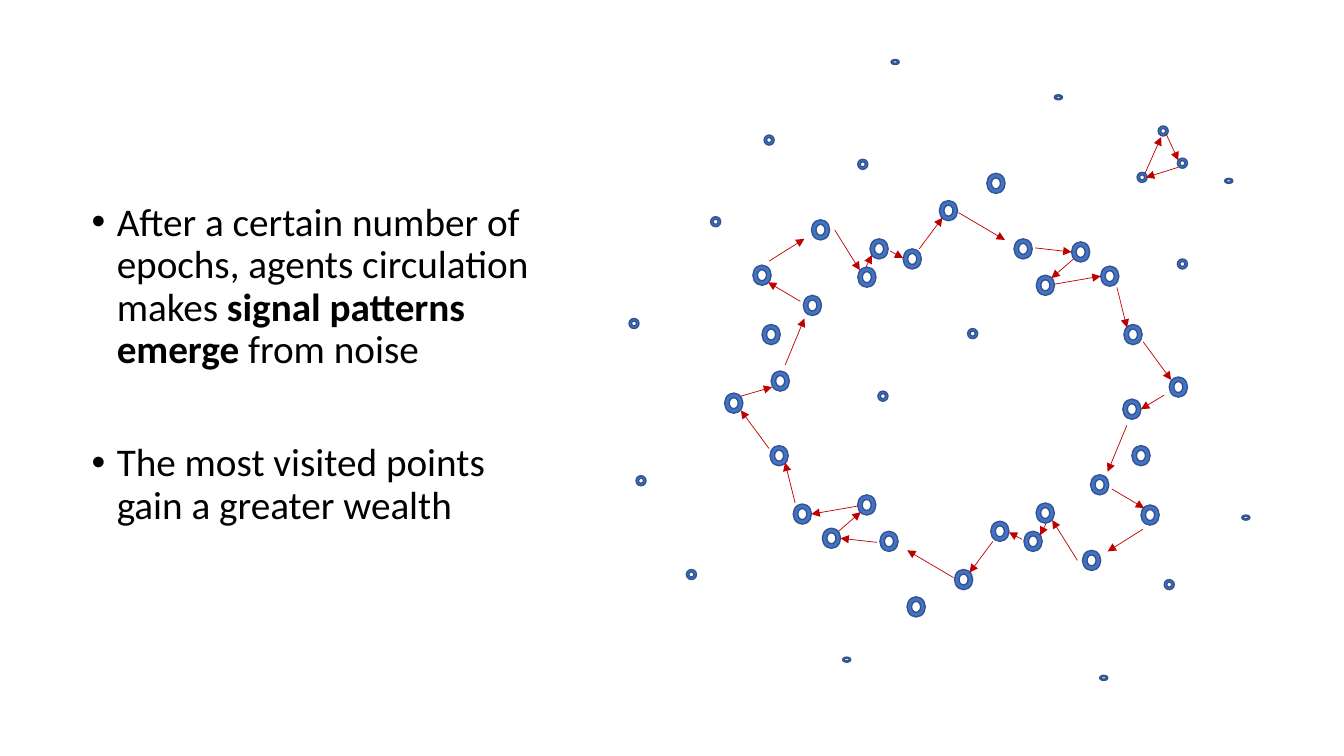
from lxml import etree
from pptx import Presentation
from pptx.dml.color import RGBColor
from pptx.enum.shapes import MSO_CONNECTOR, MSO_SHAPE
from pptx.oxml.ns import qn
from pptx.util import Pt

DONUT = MSO_SHAPE.DONUT
STRAIGHT = MSO_CONNECTOR.STRAIGHT

COLORS = {"fill": "4472C4", "edge": "325491", "arrow": "C00000", "text": "000000"}

BIG = (13, 14.4)
SMALL = (7.2, 7.2)
TINY = (5.8, 3.6)
TURN = (1365.8, 564.5)

RING = [
    (550.8, 239), (580.3, 218.2), (841.7, 276.5), (627.9, 177.8),
    (651.6, 185), (677.5, 150.5), (746.7, 203.8), (730.8, 177.8),
    (792.7, 197.3), (586.1, 164.2), (711.4, 131), (619.2, 198),
    (771.9, 180), (809.3, 239), (544.3, 196.6), (557.3, 272.2),
]
PATHS = [
    ((560.9, 260.6), (574.6, 227.5)), ((571.7, 215.3), (548.6, 201.6)),
    ((549.4, 186.5), (574.6, 170.6)), ((596.2, 164.2), (614.2, 193)),
    ((618.5, 190.8), (622.8, 182.2)), ((635.8, 179.3), (645.1, 184.3)),
    ((656.6, 177.8), (673.2, 155.5)), ((684.7, 151.9), (717.8, 171.4)),
    ((739.4, 177.1), (765.4, 180)), ((766.8, 185), (751, 198.7)),
    ((816.5, 244.1), (836.6, 271.4)), ((797.8, 205.2), (805, 234)),
    ((753.1, 203), (786.2, 197.3)),
]
LINKS = [
    ((529.2, 283), (551.5, 276.5)), ((831.6, 282.2), (815, 292.3)),
    ((817.9, 123.8), (829.4, 97.9)), ((833, 95.8), (841.7, 114.5)),
    ((841.7, 119.5), (818.6, 126.7)),
]
NOISE = [
    (452.9, 231.1), (835.2, 417.6), (844.6, 188.6), (549.4, 100.1),
    (457.9, 343.4), (694.8, 238.3), (511.2, 158.4), (493.9, 410.4),
    (630.7, 283), (844.6, 116.6), (815.8, 126.7), (830.9, 93.6),
    (616.3, 117.4),
]
SPECKS = [
    (756, 69.5), (877.7, 129.2), (639.4, 44.3),
    (788.4, 484.2), (889.9, 369.7), (604.8, 471.2),
]
BULLETS = [
    (10, [("After a certain number of epochs, agents circulation makes ", False),
          ("signal patterns emerge ", True), ("from noise", False)]),
    (50.75, [("The most visited points gain a greater wealth", False)]),
]


def color(name):
    """Return the named colour."""
    return RGBColor.from_string(COLORS[name])


def turn(point):
    """Turn a point by half a circle about the centre of the ring."""
    return TURN[0] - point[0], TURN[1] - point[1]


def add_dot(slide, center, size):
    """Draw a donut of the given size about its centre."""
    (x, y), (wide, high) = center, size
    dot = slide.shapes.add_shape(
        DONUT, Pt(x - wide / 2), Pt(y - high / 2), Pt(wide), Pt(high))
    dot.shadow.inherit = False
    dot.fill.solid()
    dot.fill.fore_color.rgb = color("fill")
    dot.line.color.rgb = color("edge")
    dot.line.width = Pt(1)


def add_arrow(slide, start, end):
    """Draw a thin arrow from start to end."""
    arrow = slide.shapes.add_connector(STRAIGHT, *map(Pt, (*start, *end)))
    arrow.line.color.rgb = color("arrow")
    arrow.line.width = Pt(0.5)
    tip = etree.SubElement(arrow.line._get_or_add_ln(), qn("a:tailEnd"))
    tip.set("type", "triangle")
    etree.SubElement(arrow._element.spPr, qn("a:effectLst"))


def add_bullets(slide, left, top, width, height):
    """Write the bulleted text."""
    box = slide.shapes.add_textbox(Pt(left), Pt(top), Pt(width), Pt(height))
    frame = box.text_frame
    frame.word_wrap = True
    for index, (gap, runs) in enumerate(BULLETS):
        para = frame.add_paragraph() if index else frame.paragraphs[0]
        para.line_spacing = 0.9
        para.space_before = Pt(gap)
        para.font.name = "Calibri"
        para.font.size = Pt(28)
        para.font.color.rgb = color("text")
        props = para._p.get_or_add_pPr()
        props.set("marL", str(Pt(18)))
        props.set("indent", str(-Pt(18)))
        mark = etree.Element(qn("a:buChar"), char="•")
        props.find(qn("a:defRPr")).addprevious(mark)
        face = etree.Element(qn("a:buFont"), typeface="Arial")
        mark.addprevious(face)
        for text, bold in runs:
            run = para.add_run()
            run.text = text
            run.font.bold = bold


def main():
    """Build the slide and save it."""
    deck = Presentation()
    deck.slide_width, deck.slide_height = Pt(960), Pt(540)
    slide = deck.slides.add_slide(deck.slide_layouts[6])
    add_bullets(slide, 58.3, 141.1, 332.6, 363.6)
    for center in RING + [turn(point) for point in RING]:
        add_dot(slide, center, BIG)
    for center in NOISE:
        add_dot(slide, center, SMALL)
    for center in SPECKS:
        add_dot(slide, center, TINY)
    back = [(turn(start), turn(end)) for start, end in PATHS]
    for start, end in PATHS + back + LINKS:
        add_arrow(slide, start, end)
    deck.save("out.pptx")


if __name__ == "__main__":
    main()
